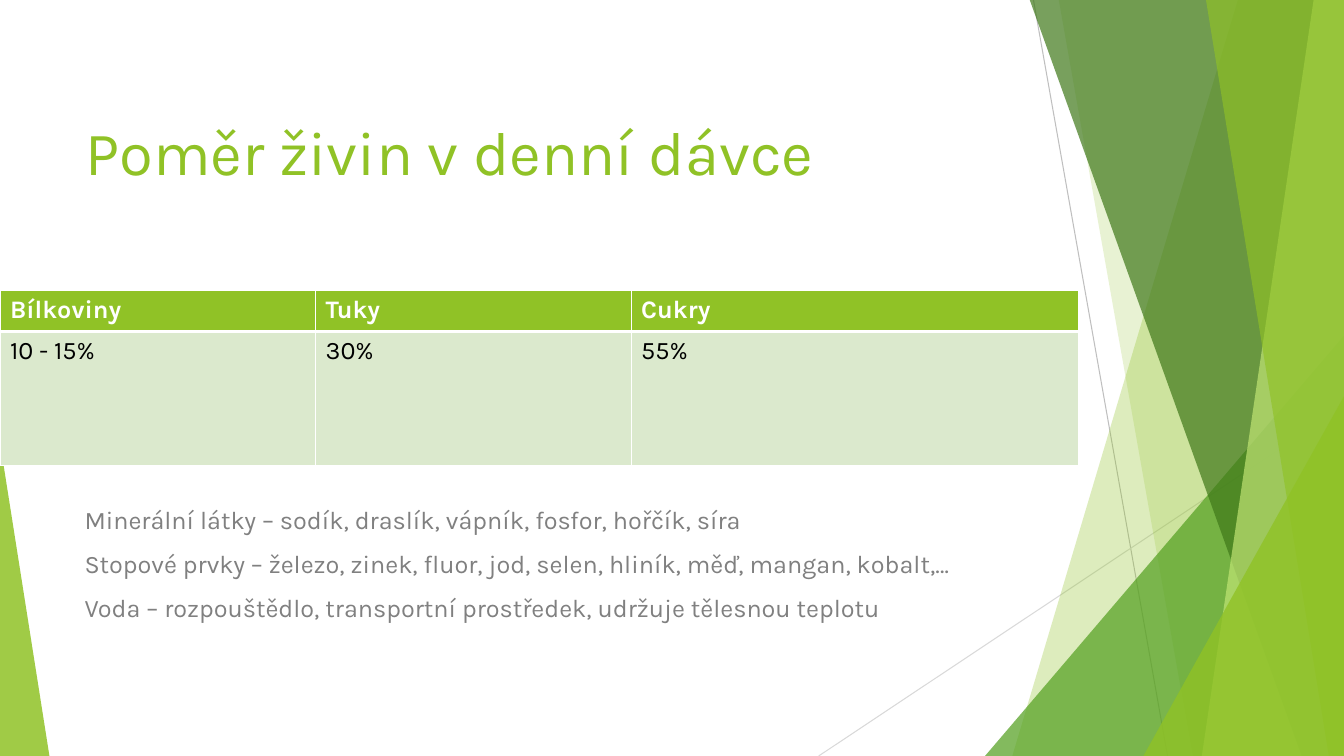
import pptx
import pptx.dml.color
import pptx.enum.shapes
import pptx.enum.text
import pptx.oxml.ns
import pptx.oxml.xmlchemy
import pptx.util
from pptx.util import Inches

FONT = "Karla"
COLORS = {
    "lime": "90C226",
    "green": "54A021",
    "forest": "3F7819",
    "pale_lime": "C0E474",
    "pale_row": "DBE9CD",
    "line": "BFBFBF",
    "light_line": "D9D9D9",
    "body": "808080",
    "white": "FFFFFF",
    "black": "000000",
}
WIDTH, HEIGHT, TOP = 13.33, 7.5, -0.01

HEADERS = ["Bílkoviny", "Tuky", "Cukry"]
SHARES = ["10 - 15%", "30%", "55%"]
NOTES = [
    "Minerální látky – sodík, draslík, vápník, fosfor, hořčík, síra",
    "Stopové prvky – železo, zinek, fluor, jod, selen, hliník, měď, mangan, kobalt,…",
    "Voda – rozpouštědlo, transportní prostředek, udržuje tělesnou teplotu",
]


def rgb(color):
    return pptx.dml.color.RGBColor.from_string(COLORS[color])


def new_element(tag):
    return pptx.oxml.xmlchemy.OxmlElement(tag)


def fill_translucent(shape, color, opacity):
    """Fill a borderless shape, with opacity in percent."""
    shape.shadow.inherit = False
    shape.line.fill.background()
    shape.fill.solid()
    shape.fill.fore_color.rgb = rgb(color)
    fill = shape._element.spPr.find(pptx.oxml.ns.qn("a:solidFill"))
    alpha = new_element("a:alpha")
    alpha.set("val", str(opacity * 1000))
    fill[0].append(alpha)


def add_thin_line(slide, start, end, color):
    line = slide.shapes.add_connector(
        pptx.enum.shapes.MSO_CONNECTOR.STRAIGHT,
        *[Inches(value) for value in start + end])
    line.line.color.rgb = rgb(color)
    line.line.width = pptx.util.Pt(0.75)
    line._element.spPr.append(new_element("a:effectLst"))


def add_band(slide, top_x, bottom_x, color, opacity):
    """Add a band from a slanted left edge to the right side of the slide."""
    corners = [(top_x, TOP), (WIDTH, TOP), (WIDTH, HEIGHT), (bottom_x, HEIGHT)]
    points = [(Inches(x), Inches(y)) for x, y in corners]
    builder = slide.shapes.build_freeform(*points[0], scale=1.0)
    builder.add_line_segments(points[1:], close=True)
    fill_translucent(builder.convert_to_shape(), color, opacity)


def add_corner_triangle(slide, left, top, width, apex, color, opacity):
    """Add a triangle standing on the bottom edge; apex 0 is left, 1 right."""
    triangle = slide.shapes.add_shape(
        pptx.enum.shapes.MSO_SHAPE.ISOSCELES_TRIANGLE,
        Inches(left), Inches(top), Inches(width), Inches(HEIGHT - top))
    triangle.adjustments[0] = apex
    fill_translucent(triangle, color, opacity)


def format_runs(paragraph, size, color, bold=False):
    for run in paragraph.runs:
        run.font.name = FONT
        run.font.size = pptx.util.Pt(size)
        run.font.bold = bold
        run.font.color.rgb = rgb(color)


def add_text(slide, box, lines, size, color, anchor, space_before=0):
    text_box = slide.shapes.add_textbox(*[Inches(value) for value in box])
    text_frame = text_box.text_frame
    text_frame.word_wrap = True
    text_frame.vertical_anchor = anchor
    text_frame.text = "\n".join(lines)
    for index, paragraph in enumerate(text_frame.paragraphs):
        paragraph.space_before = pptx.util.Pt(space_before if index else 0)
        format_runs(paragraph, size, color)


def set_borders(cell, widths):
    """Draw white borders; widths are points for left, right, top, bottom."""
    properties = cell._tc.get_or_add_tcPr()
    for index, (side, width) in enumerate(zip("LRTB", widths)):
        border = new_element("a:ln" + side)
        border.set("w", str(int(pptx.util.Pt(width))))
        fill = new_element("a:solidFill")
        color = new_element("a:srgbClr")
        color.set("val", COLORS["white"])
        fill.append(color)
        border.append(fill)
        properties.insert(index, border)


def add_nutrient_table(slide):
    column_widths, row_heights = [3.13, 3.13, 4.44], [0.41, 1.33]
    table = slide.shapes.add_table(
        2, 3, Inches(0), Inches(2.88),
        Inches(sum(column_widths)), Inches(sum(row_heights))).table
    table.first_row = False
    table.horz_banding = False
    for column, width in zip(table.columns, column_widths):
        column.width = Inches(width)
    row_styles = [
        (HEADERS, "lime", "white", True, (1, 1, 1, 3)),
        (SHARES, "pale_row", "black", False, (1, 1, 3, 1)),
    ]
    for row, height, style in zip(table.rows, row_heights, row_styles):
        row.height = Inches(height)
        texts, fill, color, bold, borders = style
        for cell, text in zip(row.cells, texts):
            cell.text = text
            cell.fill.solid()
            cell.fill.fore_color.rgb = rgb(fill)
            format_runs(cell.text_frame.paragraphs[0], 18, color, bold)
            set_borders(cell, borders)


def add_decoration(slide):
    add_thin_line(slide, (10.25, 0), (11.58, HEIGHT), "line")
    add_thin_line(slide, (WIDTH, 4.03), (8.12, HEIGHT), "light_line")
    add_band(slide, 12.28, 10.04, "lime", 30)
    add_band(slide, 10.5, 11.83, "lime", 20)
    add_corner_triangle(slide, 9.77, 3.33, 3.56, 1, "green", 72)
    add_band(slide, 10.21, 12.91, "forest", 70)
    add_band(slide, 13.03, 11.92, "pale_lime", 70)
    add_band(slide, 11.96, 13.18, "lime", 65)
    add_corner_triangle(slide, 11.34, 3.93, 1.99, 1, "lime", 80)
    add_corner_triangle(slide, 0, 4.39, 0.49, 0, "lime", 85)


def main():
    presentation = pptx.Presentation()
    presentation.slide_width = Inches(WIDTH)
    presentation.slide_height = Inches(HEIGHT)
    slide = presentation.slides.add_slide(presentation.slide_layouts[6])
    add_decoration(slide)
    add_text(slide, (0.75, 0.67, 9.39, 1.66), ["Poměr živin v denní dávce"],
             44, "lime", pptx.enum.text.MSO_ANCHOR.MIDDLE)
    add_text(slide, (0.74, 4.95, 9.4, 1.66), NOTES,
             18, "body", pptx.enum.text.MSO_ANCHOR.TOP, space_before=10)
    add_nutrient_table(slide)
    presentation.save("out.pptx")


if __name__ == "__main__":
    main()
